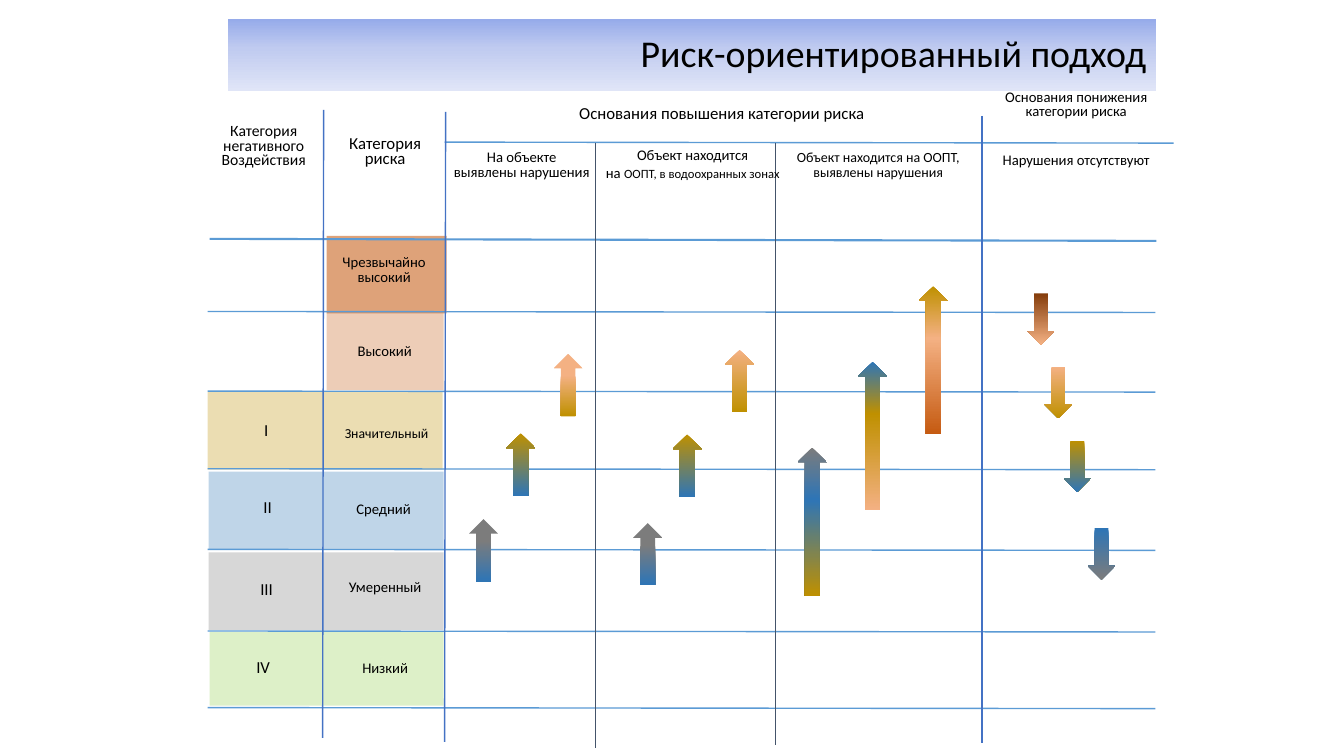
import pptx
import pptx.util
import pptx.dml.color
import pptx.enum.shapes
import pptx.enum.text
import pptx.oxml.ns
from lxml import etree

qn = pptx.oxml.ns.qn
SHAPES = pptx.enum.shapes.MSO_SHAPE
ALIGN = pptx.enum.text.PP_ALIGN
FIT = pptx.enum.text.MSO_AUTO_SIZE

COLORS = {
    "ink": "000000", "row": "5B9BD5", "column": "4472C4", "divider": "44546A",
    "low": "92D050", "moderate": "7C7C7C", "medium": "2E75B6",
    "significant": "BF9000", "high": "F4B183", "extreme": "C55A11",
    "peak": "843C0B", "sky": "96ABEA", "haze": "C0CBF0", "mist": "E0E5F7",
}


class RiskSlide:
    FONT = "Calibri"
    COLUMNS, ROWS = 133.3, 75

    def __init__(self, deck):
        self.column = deck.slide_width / self.COLUMNS
        self.row = deck.slide_height / self.ROWS
        self.slide = deck.slides.add_slide(deck.slide_layouts[5])
        self.shapes = self.slide.shapes

    def box(self, left, top, width, height):
        return (round(left * self.column), round(top * self.row),
                round(width * self.column), round(height * self.row))

    def color(self, name):
        return pptx.dml.color.RGBColor.from_string(COLORS[name])

    def format_runs(self, paragraph, size):
        for run in paragraph.runs:
            run.font.size = pptx.util.Pt(size)
            run.font.name = self.FONT
            run.font.color.rgb = self.color("ink")

    def gradient(self, shape, stops):
        shape.fill.gradient()
        shape.fill.gradient_angle = 270
        stop_list = next(shape._element.spPr.iter(qn("a:gsLst")))
        for stop in list(stop_list):
            stop_list.remove(stop)
        for position, name in stops:
            stop = etree.SubElement(stop_list, qn("a:gs"), pos=str(position * 1000))
            etree.SubElement(stop, qn("a:srgbClr"), val=COLORS[name])

    def preset(self, kind, *place):
        shape = self.shapes.add_shape(kind, *self.box(*place))
        shape.shadow.inherit = False
        shape.line.fill.background()
        return shape

    def band(self, place, name, opacity):
        band = self.preset(SHAPES.RECTANGLE, *place)
        band.fill.solid()
        band.fill.fore_color.rgb = self.color(name)
        tint = next(band._element.spPr.iter(qn("a:srgbClr")))
        etree.SubElement(tint, qn("a:alpha"), val=str(opacity * 1000))

    def arrow(self, kind, place, stops):
        self.gradient(self.preset(kind, *place), stops)

    def rule(self, start, end, name, width=1):
        start_x, start_y, _, _ = self.box(*start, 0, 0)
        end_x, end_y, _, _ = self.box(*end, 0, 0)
        rule = self.shapes.add_connector(
            pptx.enum.shapes.MSO_CONNECTOR.STRAIGHT, start_x, start_y, end_x, end_y)
        rule.line.color.rgb = self.color(name)
        rule.line.width = pptx.util.Pt(width)
        etree.SubElement(rule._element.spPr, qn("a:effectLst"))

    def label(self, place, text, size, leading=10.5, wrap=True):
        frame = self.shapes.add_textbox(*self.box(*place)).text_frame
        frame.text = text
        frame.word_wrap = wrap
        frame.auto_size = FIT.SHAPE_TO_FIT_TEXT
        for paragraph in frame.paragraphs:
            paragraph.alignment = ALIGN.CENTER
            if leading:
                paragraph.line_spacing = pptx.util.Pt(leading)
            self.format_runs(paragraph, size)
        return frame

    def title(self, place, text, size, stops):
        title = self.shapes.title
        title.left, title.top, title.width, title.height = self.box(*place)
        self.gradient(title, stops)
        frame = title.text_frame
        frame.text = text
        frame.auto_size = FIT.NONE
        frame.vertical_anchor = pptx.enum.text.MSO_ANCHOR.MIDDLE
        heading = frame.paragraphs[0]
        heading.alignment = ALIGN.RIGHT
        heading.line_spacing = 0.9
        self.format_runs(heading, size)
        self.shapes._spTree.append(title._element)


def main():
    deck = pptx.Presentation()
    deck.slide_width = pptx.util.Inches(13.33)
    deck.slide_height = pptx.util.Inches(7.5)
    risk = RiskSlide(deck)

    for place, name, opacity in [
        ((20.8, 62.7, 23.2, 7.3), "low", 31),
        ((32.4, 23.4, 11.9, 7.7), "extreme", 56),
        ((20.6, 38.9, 23.3, 7.7), "significant", 30),
        ((32.4, 31, 11.6, 7.7), "extreme", 30),
        ((20.7, 46.8, 23.3, 7.7), "medium", 30),
        ((20.7, 54.8, 23.3, 7.7), "moderate", 30),
    ]:
        risk.band(place, name, opacity)

    for level in (30.9, 38.8, 46.5, 54.5, 62.6, 70.2):
        risk.rule((20.6, level), (114.6, level + 0.1), "row")
    risk.rule((44.1, 14.1), (116.4, 14.2), "row")
    risk.rule((20.8, 23.7), (114.7, 23.9), "row", 1.5)

    for start, end in [((32.1, 10.9), (32, 73.2)), ((44.2, 11.1), (44.1, 73.6)),
                       ((97.4, 11.5), (97.4, 73.7))]:
        risk.rule(start, end, "column")
    for x, bottom in [(59.1, 74.2), (76.9, 73.9)]:
        risk.rule((x, 14.2), (x, bottom), "divider", 0.75)

    risk.label((19.4, 11.9, 13.5, 5.6), "Категория\nнегативного\nВоздействия", 11.2)
    risk.label((33.4, 13.2, 9.6, 4.1), "Категория\nриска", 12, wrap=False)
    risk.label((44.6, 10.2, 54, 2.6), "Основания повышения категории риска", 12)
    risk.label((43.9, 14.5, 15.7, 4.1), "На объекте\nвыявлены нарушения", 10.5)
    risk.label((76.9, 14.5, 20.4, 5.8),
               "Объект находится на ООПТ, выявлены нарушения", 10)
    risk.label((98.1, 8.6, 17.3, 3.8), "Основания понижения категории риска", 10.5, 9.8)
    risk.label((97.6, 14.8, 18.3, 2.6), "Нарушения отсутствуют", 10.5)

    zones = risk.label((59.1, 14, 19.2, 6.1), "Объект находится\nна ", 10.5, None)
    zone_names = zones.paragraphs[1].add_run()
    zone_names.text = "ООПТ, в водоохранных зонах"
    risk.format_runs(zones.paragraphs[1], 10.5)
    zone_names.font.size = pptx.util.Pt(9)

    for impact, left, top, width in [("I", 25.2, 41.7, 2.4), ("II", 25.1, 49.3, 2.9),
                                     ("III", 24.8, 57.5, 3.3), ("IV", 24.4, 65.2, 3.4)]:
        risk.label((left, top, width, 2.6), impact, 12, wrap=False)

    for category, left, top, width in [
        ("Чрезвычайно\nвысокий", 32.9, 24.9, 10.4), ("Высокий", 34.4, 33.7, 7.5),
        ("Средний", 34.3, 49.4, 7.5), ("Умеренный", 33.5, 57.1, 9.4),
        ("Низкий", 34.9, 65.2, 6.6),
    ]:
        risk.label((left, top, width, 2.6), category, 10.5, wrap=False)
    risk.label((30.7, 41.8, 15.3, 2.6), "Значительный", 9.8)

    to_medium = [(35, "moderate"), (100, "medium")]
    to_significant = [(0, "significant"), (100, "medium")]
    to_high = [(0, "high"), (100, "significant")]
    for left, top, height, stops in [
        (46.5, 51.5, 6.2, to_medium),
        (50.2, 43, 6.2, to_significant),
        (54.9, 35.1, 6.2, [(35, "high"), (100, "significant")]),
        (79.1, 44.4, 14.7, [(0, "moderate"), (35, "medium"), (100, "significant")]),
        (66.7, 43.1, 6.2, to_significant),
        (71.9, 34.7, 6.2, to_high),
        (85.1, 35.9, 14.7, [(0, "medium"), (35, "significant"), (100, "high")]),
        (91.1, 28.4, 14.7, [(0, "significant"), (35, "high"), (100, "extreme")]),
        (62.8, 51.9, 6.1, to_medium),
    ]:
        risk.arrow(SHAPES.UP_ARROW, (left, top, 2.9, height), stops)

    for left, top, stops in [
        (101.9, 29.1, [(0, "peak"), (100, "high")]),
        (103.6, 36.4, to_high),
        (105.5, 43.7, to_significant),
        (107.9, 52.4, [(0, "medium"), (100, "moderate")]),
    ]:
        risk.arrow(SHAPES.DOWN_ARROW, (left, top, 2.7, 5.1), stops)

    risk.title((22.6, 1.9, 92.1, 7.1), "Риск-ориентированный подход", 27,
               [(0, "sky"), (41, "haze"), (100, "mist")])
    deck.save("out.pptx")


if __name__ == "__main__":
    main()
